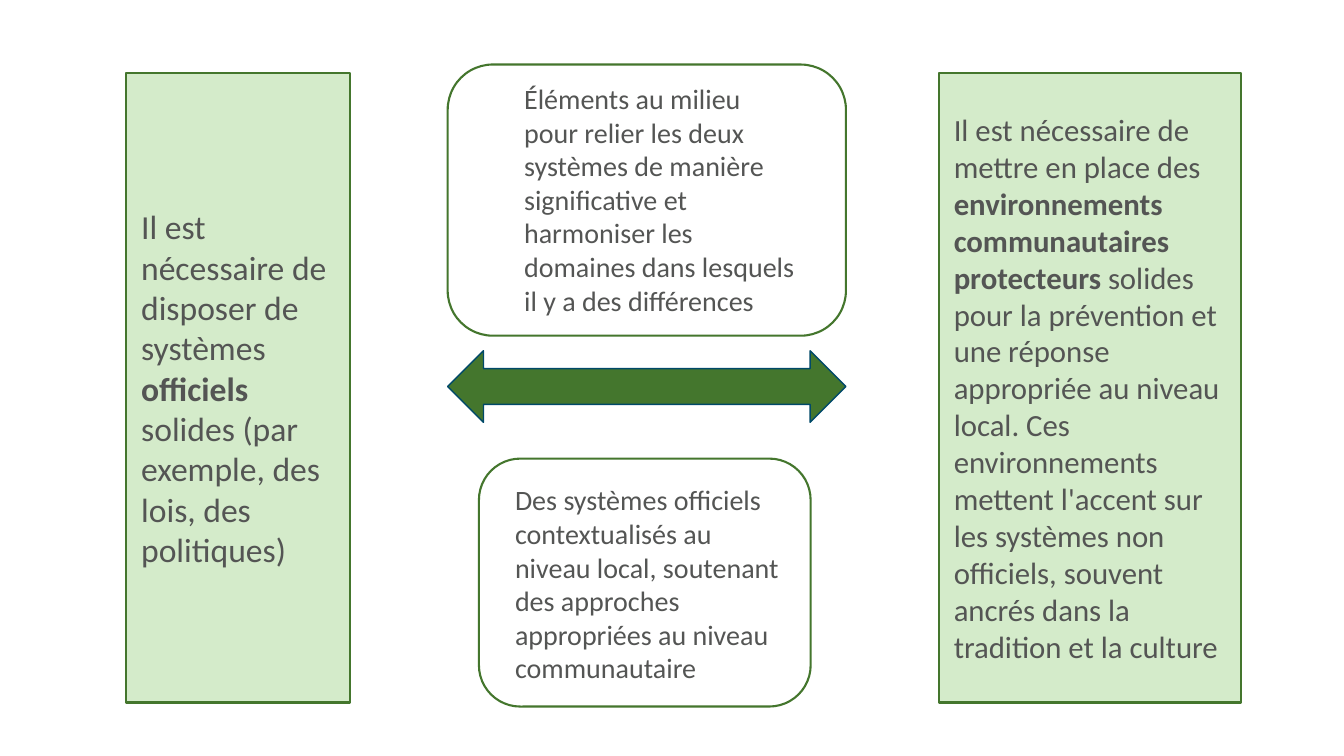
from pptx import Presentation
from pptx.dml.color import RGBColor
from pptx.enum.shapes import MSO_SHAPE as SHAPE
from pptx.enum.text import MSO_ANCHOR as ANCHOR, MSO_AUTO_SIZE as AUTO, PP_ALIGN as ALIGN
from pptx.util import Pt

PX = 9144
GREEN, PALE, GREY, NAVY, WHITE = "44762D", "D4EBCA", "545554", "014968", "FFFFFF"


def color(value):
    """Turn a hex string into a colour."""
    return RGBColor.from_string(value)


def add_shape(s, kind, box, fill=None, line=GREEN, width=1.5):
    """Draw a preset shape in a box given in px."""
    sp = s.shapes.add_shape(kind, *[v * PX for v in box])
    sp.shadow.inherit = False
    if fill:
        sp.fill.solid()
        sp.fill.fore_color.rgb = color(fill)
    else:
        sp.fill.background()
    sp.line.color.rgb = color(line)
    sp.line.width = Pt(width)
    return sp


def write(tf, *runs, size=20, anchor=ANCHOR.TOP, inset=10):
    """Fill a text frame with runs, every second one bold."""
    tf.word_wrap = True
    tf.vertical_anchor = anchor
    tf.margin_left = tf.margin_right = inset * PX
    p = tf.paragraphs[0]
    p.alignment = ALIGN.LEFT
    for i, text in enumerate(runs):
        r = p.add_run()
        r.text = text
        r.font.name = "Calibri"
        r.font.size = Pt(size)
        r.font.bold = i % 2 == 1
        r.font.color.rgb = color(GREY)


def pillar(s, box, size, *runs):
    """Draw a pale green column with centred-height text."""
    sp = add_shape(s, SHAPE.RECTANGLE, box, PALE)
    write(sp.text_frame, *runs, size=size, anchor=ANCHOR.MIDDLE, inset=15)


def bridge(s, box, text_offset, text_size, text, fill=None):
    """Draw a rounded frame and the text box placed inside it."""
    x, y, w, h = box
    dx, dy = text_offset
    add_shape(s, SHAPE.ROUNDED_RECTANGLE, box)
    tb = s.shapes.add_textbox(*[v * PX for v in (x + dx, y + dy, *text_size)])
    if fill:
        tb.fill.solid()
        tb.fill.fore_color.rgb = color(fill)
    write(tb.text_frame, text)
    tb.text_frame.auto_size = AUTO.SHAPE_TO_FIT_TEXT


def main():
    """Build the slide and save it."""
    prs = Presentation()
    prs.slide_width, prs.slide_height = 1333 * PX, 750 * PX
    s = prs.slides.add_slide(prs.slide_layouts[6])
    pillar(s, (125, 72, 222, 625), 24,
           "Il est nécessaire de disposer de systèmes ", "officiels ",
           "solides (par exemple, des lois, des politiques)")
    pillar(s, (931, 72, 300, 625), 22,
           "Il est nécessaire de mettre en place des ",
           "environnements communautaires protecteurs ",
           "solides pour la prévention et une réponse appropriée au niveau local. "
           "Ces environnements mettent l'accent sur les systèmes non officiels, "
           "souvent ancrés dans la tradition et la culture")
    add_shape(s, SHAPE.LEFT_RIGHT_ARROW, (444, 348, 395, 71), GREEN, NAVY, 1)
    bridge(s, (444, 64, 395, 269), (66, 12), (294, 246),
           "Éléments au milieu pour relier les deux systèmes de manière "
           "significative et harmoniser les domaines dans lesquels il y a des "
           "différences", fill=WHITE)
    bridge(s, (475, 455, 329, 246), (26, 19), (294, 212),
           "Des systèmes officiels contextualisés au niveau local, soutenant des "
           "approches appropriées au niveau communautaire")
    prs.save("out.pptx")


if __name__ == "__main__":
    main()
